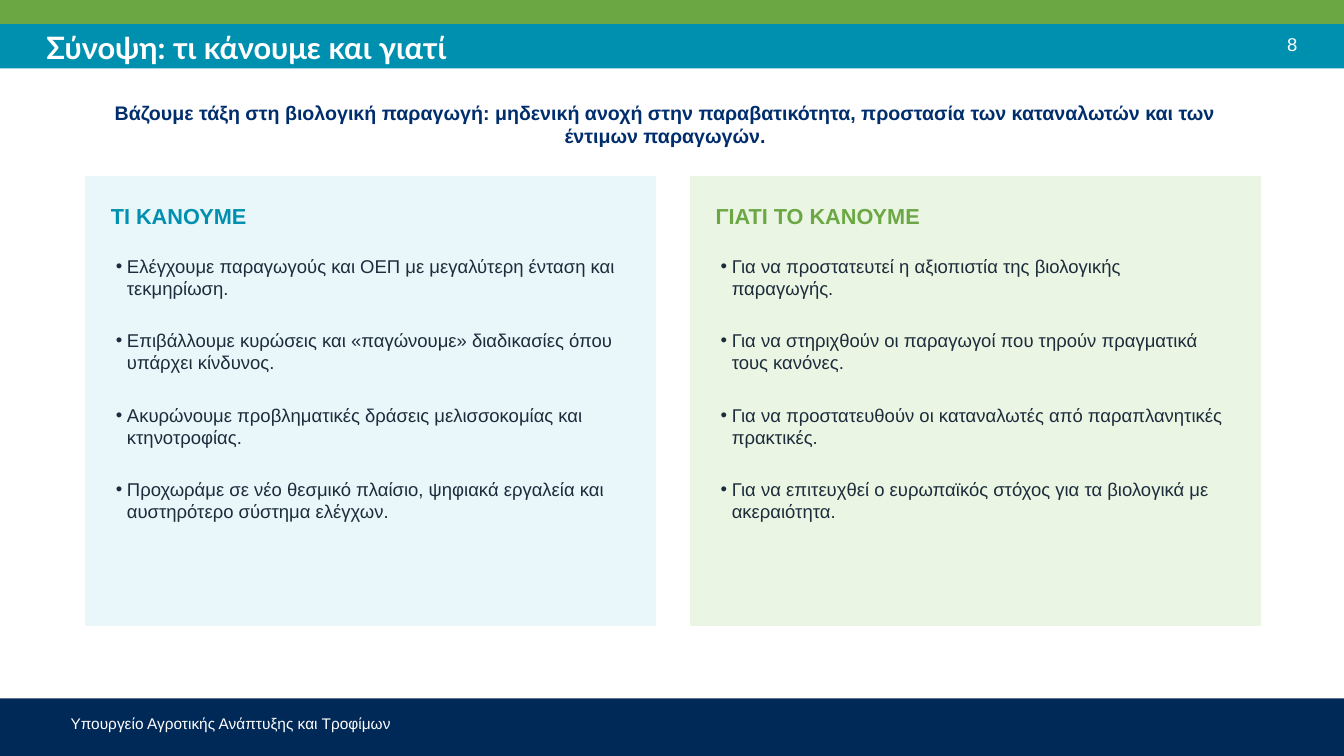
from lxml import etree
from pptx import Presentation
from pptx import util as u
from pptx.dml.color import RGBColor
from pptx.enum import shapes, text
from pptx.oxml.ns import qn

GREEN = RGBColor(0x6B, 0xA8, 0x43)
TEAL = RGBColor(0x00, 0x90, 0xAF)
NAVY = RGBColor(0x00, 0x29, 0x57)
BLUE = RGBColor(0x00, 0x2E, 0x6D)
INK = RGBColor(0x1D, 0x2C, 0x3B)
WHITE = RGBColor(0xFF, 0xFF, 0xFF)
PALE_BLUE = RGBColor(0xE9, 0xF6, 0xFA)
PALE_GREEN = RGBColor(0xEA, 0xF5, 0xE4)

# The grid has ten cells to the inch
CELL = u.Inches(0.1)
COLUMNS, ROWS = 133.33, 75


def cells(count):
    return u.Emu(round(count * CELL))


class SlideBuilder:
    """Holds the style and the current slide; positions are grid cells."""

    body_font, title_font = "Arial", "Lato"
    body_size = 13.2
    bullet_indent = cells(1.1)
    bullet_gap = u.Pt(21.5)

    def __init__(self, prs):
        self.slide = prs.slides.add_slide(prs.slide_layouts[5])

    def panel(self, left, top, width, height, color, outlined=False):
        panel = self.slide.shapes.add_shape(
            shapes.MSO_SHAPE.RECTANGLE, *map(cells, (left, top, width, height)))
        panel.shadow.inherit = False
        panel.fill.solid()
        panel.fill.fore_color.rgb = color
        if outlined:
            panel.line.color.rgb = color
            panel.line.width = u.Pt(1)
        else:
            panel.line.fill.background()

    def frame(self, holder):
        frame = holder.text_frame
        frame.margin_left = frame.margin_right = 0
        frame.margin_top = frame.margin_bottom = 0
        frame.word_wrap = True
        frame.auto_size = text.MSO_AUTO_SIZE.NONE
        frame.vertical_anchor = text.MSO_ANCHOR.MIDDLE
        return frame

    def box(self, left, top, width, height):
        return self.frame(self.slide.shapes.add_textbox(
            *map(cells, (left, top, width, height))))

    def run(self, paragraph, words, size, color, bold=False, font=None):
        run = paragraph.add_run()
        run.text = words
        run.font.name = font or self.body_font
        run.font.size = u.Pt(size)
        run.font.bold = bold
        run.font.color.rgb = color

    def title(self, words, left, top, width, height):
        title = self.slide.shapes.title
        title.left, title.top, title.width, title.height = map(
            cells, (left, top, width, height))
        # Bring the title in front of the header bands
        title.element.getparent().append(title.element)
        paragraph = self.frame(title).paragraphs[0]
        paragraph.alignment = text.PP_ALIGN.LEFT
        self.run(paragraph, words, 22, WHITE, True, self.title_font)

    def label(self, words, place, size, color, bold=False,
              align=text.PP_ALIGN.LEFT):
        paragraph = self.box(*place).paragraphs[0]
        paragraph.alignment = align
        self.run(paragraph, words, size, color, bold)

    def bullets(self, items, place):
        frame = self.box(*place)
        for index, item in enumerate(items):
            paragraph = frame.add_paragraph() if index else frame.paragraphs[0]
            props = paragraph._p.get_or_add_pPr()
            props.set("marL", str(self.bullet_indent))
            props.set("indent", str(-self.bullet_indent))
            etree.SubElement(props, qn("a:buFont"), typeface=self.body_font)
            etree.SubElement(props, qn("a:buChar"), char="•")
            if index:
                paragraph.space_before = self.bullet_gap
            self.run(paragraph, item, self.body_size, INK)


WHAT_AND_WHY = [
    ("ΤΙ ΚΑΝΟΥΜΕ", TEAL, PALE_BLUE, [
        "Ελέγχουμε παραγωγούς και ΟΕΠ με μεγαλύτερη ένταση και τεκμηρίωση.",
        "Επιβάλλουμε κυρώσεις και «παγώνουμε» διαδικασίες όπου υπάρχει κίνδυνος.",
        "Ακυρώνουμε προβληματικές δράσεις μελισσοκομίας και κτηνοτροφίας.",
        "Προχωράμε σε νέο θεσμικό πλαίσιο, ψηφιακά εργαλεία και αυστηρότερο "
        "σύστημα ελέγχων.",
    ]),
    ("ΓΙΑΤΙ ΤΟ ΚΑΝΟΥΜΕ", GREEN, PALE_GREEN, [
        "Για να προστατευτεί η αξιοπιστία της βιολογικής παραγωγής.",
        "Για να στηριχθούν οι παραγωγοί που τηρούν πραγματικά τους κανόνες.",
        "Για να προστατευθούν οι καταναλωτές από παραπλανητικές πρακτικές.",
        "Για να επιτευχθεί ο ευρωπαϊκός στόχος για τα βιολογικά με ακεραιότητα.",
    ]),
]


def main():
    prs = Presentation()
    prs.slide_width, prs.slide_height = cells(COLUMNS), cells(ROWS)
    overview = SlideBuilder(prs)

    # Header bands, title and page number
    overview.panel(0, 0, COLUMNS, 2.4, GREEN)
    overview.panel(0, 2.4, COLUMNS, 4.4, TEAL)
    overview.title("Σύνοψη: τι κάνουμε και γιατί", 4.6, 2.6, 106, 4.2)
    overview.label("8", (125.5, 3.2, 3.2, 2.4), 13.2, WHITE,
                   align=text.PP_ALIGN.RIGHT)

    # Key message
    overview.label(
        "Βάζουμε τάξη στη βιολογική παραγωγή: μηδενική ανοχή στην "
        "παραβατικότητα, προστασία των καταναλωτών και των έντιμων παραγωγών.",
        (8, 10.2, 116, 4.2), 14, BLUE, True, text.PP_ALIGN.CENTER)

    # Two panels: what we do and why
    for index, (heading, accent, tint, points) in enumerate(WHAT_AND_WHY):
        left = 8.5 + 60 * index
        overview.panel(left, 17.5, 56.5, 44.5, tint, outlined=True)
        overview.label(heading, (left + 2.5, 20.2, 32, 2.4), 15.5, accent, True)
        overview.bullets(points, (left + 3, 25.5, 50, 26.1))

    # Footer
    overview.panel(0, 69.3, COLUMNS, 5.7, NAVY)
    overview.label("Υπουργείο Αγροτικής Ανάπτυξης και Τροφίμων",
                   (7, 71, 42, 1.5), 11, WHITE)

    prs.save("out.pptx")


if __name__ == "__main__":
    main()
